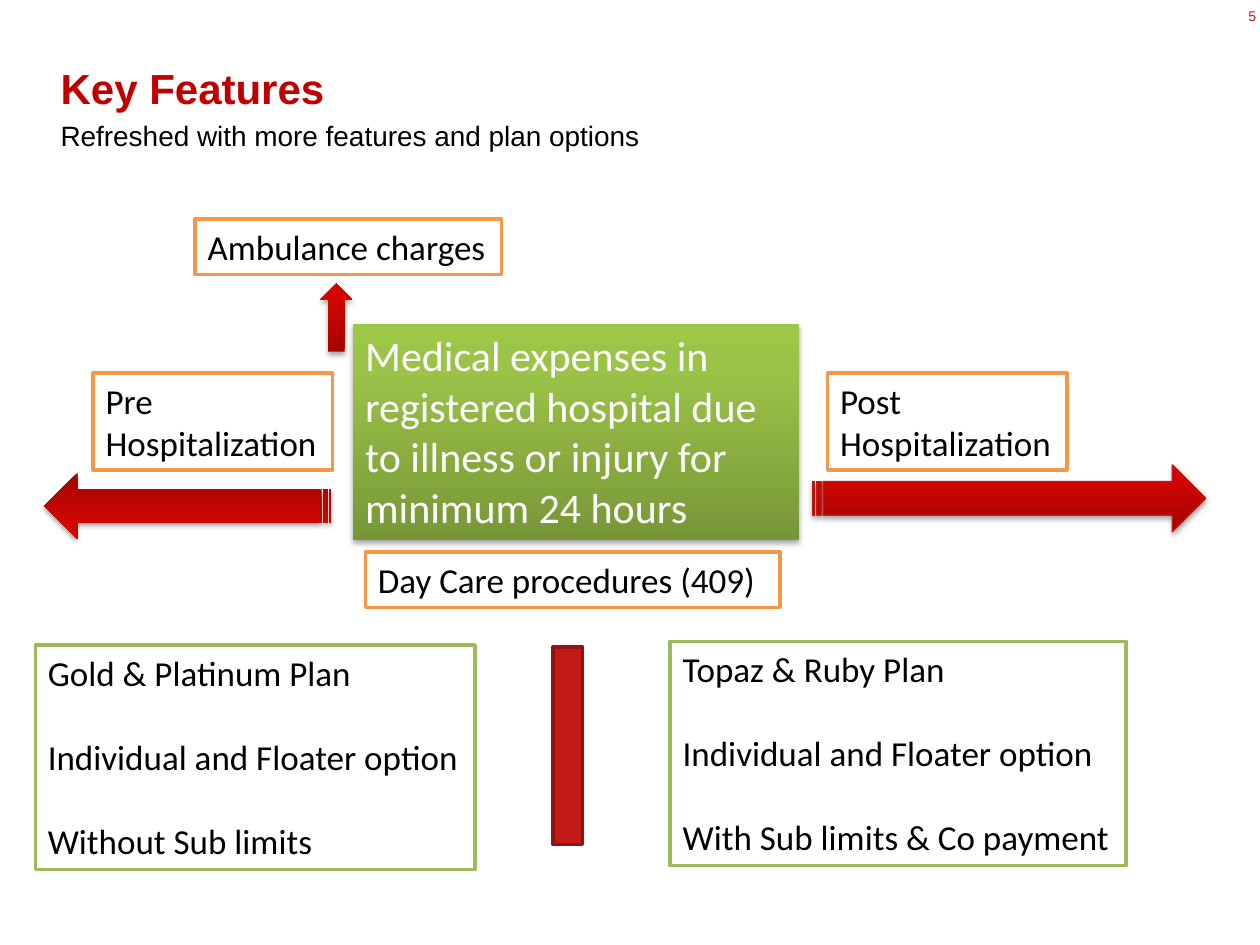
from copy import deepcopy
from dataclasses import dataclass
from lxml import etree
from pptx import Presentation
from pptx.dml.color import RGBColor
from pptx.enum.shapes import MSO_SHAPE
from pptx.enum.text import MSO_ANCHOR, MSO_AUTO_SIZE, PP_ALIGN
from pptx.oxml.ns import qn
from pptx.util import Pt

RECTANGLE = MSO_SHAPE.RECTANGLE
STRIPED_ARROW = MSO_SHAPE.STRIPED_RIGHT_ARROW
UP_ARROW = MSO_SHAPE.UP_ARROW
MINUS = MSO_SHAPE.MATH_MINUS
TOP, MIDDLE = MSO_ANCHOR.TOP, MSO_ANCHOR.MIDDLE
LEFT, RIGHT = PP_ALIGN.LEFT, PP_ALIGN.RIGHT
NO_FIT = MSO_AUTO_SIZE.NONE

RED_STOPS = ((0, "A20400"), (0.8, "D20500"), (1, "D30500"))
GREEN_STOPS = ((0, "779737"), (0.8, "9BC348"), (1, "9DC746"))
ORANGE, GREEN, RED, BLACK, WHITE = "F79646", "9BBB59", "C21B17", "000000", "FFFFFF"


@dataclass(frozen=True)
class Frame:
    """Left, top, width and height in points."""
    left: float
    top: float
    width: float
    height: float

    def lengths(self) -> tuple:
        """Return the four lengths for python-pptx."""
        return Pt(self.left), Pt(self.top), Pt(self.width), Pt(self.height)


@dataclass(frozen=True)
class TextStyle:
    """Look of the words in one box."""
    size: float
    color: str = BLACK
    font: str = "Calibri"
    bold: bool = False
    align: PP_ALIGN = LEFT
    anchor: MSO_ANCHOR = TOP
    gap: float = 0
    spacing: float = 0
    has_inset: bool = True


@dataclass(frozen=True)
class Label:
    """Outlined white box with lines of text."""
    frame: Frame
    outline: str
    lines: tuple
    gap: float = 0


@dataclass(frozen=True)
class Glossy:
    """Shaded shape with a soft shadow."""
    kind: MSO_SHAPE
    frame: Frame
    stops: tuple
    rotation: float = 0
    outline: str = ""


LABELS = (
    Label(Frame(53.3, 213.1, 136.8, 55.4), ORANGE, ("Pre", "Hospitalization")),
    Label(Frame(473, 213.1, 136.8, 55.4), ORANGE, ("Post", "Hospitalization")),
    Label(Frame(208.8, 315.4, 236.9, 31.7), ORANGE, ("Day Care procedures (409)",)),
    Label(Frame(111.6, 125.3, 175, 31.7), ORANGE, ("Ambulance charges",)),
    Label(Frame(20.2, 368.6, 251.3, 128.2), GREEN,
          ("Gold & Platinum Plan", "Individual and Floater option", "Without Sub limits"), 24),
    Label(Frame(383, 366.5, 260.6, 128.2), GREEN,
          ("Topaz & Ruby Plan", "Individual and Floater option",
           "With Sub limits & Co payment"), 24),
)
ARROWS = (
    Glossy(STRIPED_ARROW, Frame(464.4, 265.7, 224.6, 38.2), RED_STOPS, outline="C21612"),
    Glossy(STRIPED_ARROW, Frame(25.2, 270, 164.2, 38.2), RED_STOPS, rotation=180),
    Glossy(UP_ARROW, Frame(182.9, 162, 18.7, 38.9), RED_STOPS),
)
COVER = Glossy(RECTANGLE, Frame(201.6, 185, 254.9, 123.8), GREEN_STOPS)


def rgb(color: str) -> RGBColor:
    """Turn a hex string into a colour."""
    return RGBColor.from_string(color)


def write(box, lines: tuple, style: TextStyle) -> None:
    """Fill a box with one paragraph per line."""
    text = box.text_frame
    margins = (7.2, 3.6, 7.2, 3.6) if style.has_inset else (0, 0, 0, 0)
    settings = {"word_wrap": True, "auto_size": NO_FIT, "vertical_anchor": style.anchor}
    sides = ("margin_left", "margin_top", "margin_right", "margin_bottom")
    settings.update({side: Pt(margin) for side, margin in zip(sides, margins)})
    for name, value in settings.items():
        setattr(text, name, value)
    font = {"size": Pt(style.size), "name": style.font, "bold": style.bold}
    for index, line in enumerate(lines):
        para = text.paragraphs[0] if index == 0 else text.add_paragraph()
        para.alignment = style.align
        para.space_before = Pt(style.gap if index else 0)
        if style.spacing:
            para.line_spacing = Pt(style.spacing)
        span = para.add_run()
        span.text = line
        for name, value in font.items():
            setattr(span.font, name, value)
        span.font.color.rgb = rgb(style.color)


def place(box, frame: Frame) -> None:
    """Move a placeholder to a frame."""
    for name, value in zip(("left", "top", "width", "height"), frame.lengths()):
        setattr(box, name, value)


def set_outline(shape, color: str, width: float) -> None:
    """Draw an outline, or none when the colour is empty."""
    if color:
        shape.line.color.rgb = rgb(color)
        shape.line.width = Pt(width)
    else:
        shape.line.fill.background()


def add_flat(page, kind: MSO_SHAPE, frame: Frame, fill: str, outline: str):
    """Add a plain filled shape with a two-point outline."""
    shape = page.shapes.add_shape(kind, *frame.lengths())
    shape.shadow.inherit = False
    shape.fill.solid()
    shape.fill.fore_color.rgb = rgb(fill)
    set_outline(shape, outline, 2)
    return shape


def add_label(page, label: Label) -> None:
    """Add one outlined label."""
    box = add_flat(page, RECTANGLE, label.frame, WHITE, label.outline)
    write(box, label.lines, TextStyle(20, gap=label.gap))


def add_glossy(page, item: Glossy):
    """Add a shape shaded from bottom to top, with a shadow below."""
    shape = page.shapes.add_shape(item.kind, *item.frame.lengths())
    shape.rotation = item.rotation
    shape.fill.gradient()
    shape.fill.gradient_angle = 90
    stop_list = shape._element.spPr.find(f"{qn('a:gradFill')}/{qn('a:gsLst')}")
    stop_list.append(deepcopy(stop_list[0]))
    for stop, (position, color) in zip(shape.fill.gradient_stops, item.stops):
        stop.position = position
        stop.color.rgb = rgb(color)
    set_outline(shape, item.outline, 0.75)
    shape.shadow.inherit = False
    effects = shape._element.spPr.find(qn("a:effectLst"))
    shadow = etree.SubElement(effects, qn("a:outerShdw"), blurRad=str(Pt(3.1)),
                              dist=str(Pt(1.8)), dir="5400000", rotWithShape="0")
    tone = etree.SubElement(shadow, qn("a:srgbClr"), val=BLACK)
    etree.SubElement(tone, qn("a:alpha"), val="35000")
    return shape


def main() -> None:
    """Build the key features slide."""
    deck = Presentation()
    deck.slide_width, deck.slide_height = Pt(720), Pt(540)
    page = deck.slides.add_slide(deck.slide_layouts[0])
    title, tagline = page.placeholders
    place(title, Frame(27.4, 34.6, 660.2, 38.2))
    write(title, ("Key Features",),
          TextStyle(24, "C00000", "Arial", bold=True, anchor=MIDDLE, spacing=22))
    place(tagline, Frame(27.4, 64.1, 581.8, 26.6))
    write(tagline, ("Refreshed with more features and plan options",),
          TextStyle(16, font="Arial"))
    number = page.shapes.add_textbox(*Frame(702, 4.3, 15.8, 13.7).lengths())
    write(number, ("5",), TextStyle(8, RED, "Arial", align=RIGHT, has_inset=False))
    for arrow in ARROWS:
        add_glossy(page, arrow)
    write(add_glossy(page, COVER),
          ("Medical expenses in registered hospital due to illness or injury "
           "for minimum 24 hours",), TextStyle(24, WHITE))
    divider = add_flat(page, MINUS, Frame(247.7, 390.2, 153.4, 72), RED, "901411")
    divider.rotation = 270
    for label in LABELS:
        add_label(page, label)
    deck.save("out.pptx")


if __name__ == "__main__":
    main()
